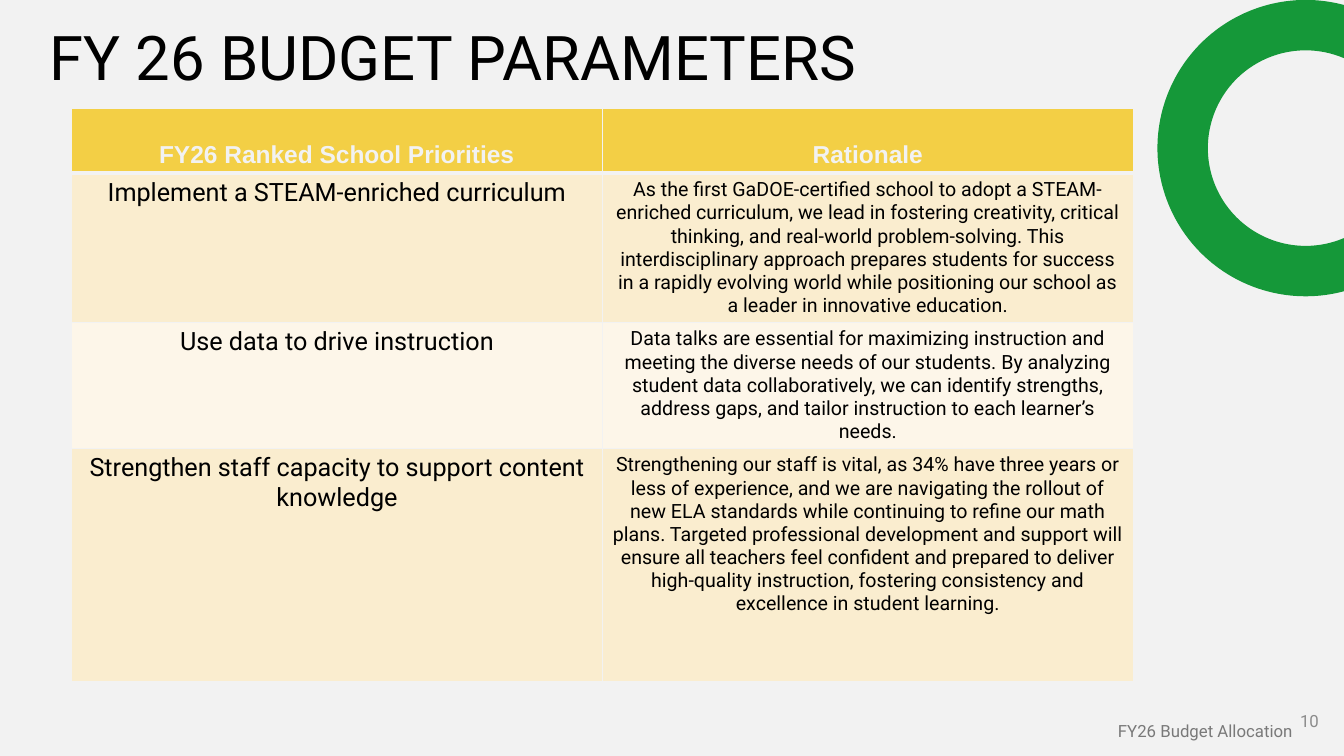
from math import acos, cos, degrees, sin

from lxml.etree import SubElement
from pptx import Presentation
from pptx.dml.color import RGBColor
from pptx.enum.text import MSO_ANCHOR, PP_ALIGN
from pptx.oxml.ns import qn
from pptx.util import Inches, Pt

PAGE_WIDTH, PAGE_HEIGHT = 13.33, 7.5
PALE_GREY = RGBColor(0xF2, 0xF2, 0xF2)
BLACK = RGBColor(0, 0, 0)
GREEN = RGBColor(0x15, 0x98, 0x39)
GOLD = RGBColor(0xF3, 0xCF, 0x45)
CREAM = RGBColor(0xFA, 0xED, 0xCF)
LIGHT_CREAM = RGBColor(0xFD, 0xF6, 0xE9)
NUMBER_GREY = RGBColor(0x8C, 0x8C, 0x8C)
FOOTER_GREY = RGBColor(0x79, 0x79, 0x79)

HEADINGS = ("FY26 Ranked School Priorities", "Rationale")
PRIORITIES = [
    ("Implement a STEAM-enriched curriculum",
     "As the first GaDOE-certified school to adopt a STEAM-enriched curriculum, "
     "we lead in fostering creativity, critical thinking, and real-world "
     "problem-solving. This interdisciplinary approach prepares students for "
     "success in a rapidly evolving world while positioning our school as a "
     "leader in innovative education."),
    ("Use data to drive instruction",
     "Data talks are essential for maximizing instruction and meeting the diverse "
     "needs of our students. By analyzing student data collaboratively, we can "
     "identify strengths, address gaps, and tailor instruction to each learner’s "
     "needs."),
    ("Strengthen staff capacity to support content knowledge",
     "Strengthening our staff is vital, as 34% have three years or less of "
     "experience, and we are navigating the rollout of new ELA standards while "
     "continuing to refine our math plans. Targeted professional development and "
     "support will ensure all teachers feel confident and prepared to deliver "
     "high-quality instruction, fostering consistency and excellence in student "
     "learning."),
]
ROW_SHARES = (0.64, 1.48, 1.25, 2.31)


def write(frame, text, size, color, align, font="Roboto", bold=False):
    frame.text = text
    para = frame.paragraphs[0]
    para.alignment = align
    span = para.runs[0]
    span.font.name = font
    span.font.size = Pt(size)
    span.font.bold = bold
    span.font.color.rgb = color
    return para


def set_borders(cell, widths):
    """Draw cell borders; widths maps a side (L, R, T, B) to points."""
    properties = cell._tc.get_or_add_tcPr()
    for side, width in widths.items():
        line = SubElement(properties, qn(f"a:ln{side}"), w=str(Pt(width)))
        fill = SubElement(line, qn("a:solidFill"))
        SubElement(fill, qn("a:srgbClr"), val=str(PALE_GREY))


def add_ring(page, center_x, center_y, radius, thickness):
    """Draw a ring cut off by the right edge of the page."""
    left, top = Inches(center_x - radius), Inches(center_y - radius)
    right, bottom = Inches(PAGE_WIDTH), Inches(center_y + radius)
    builder = page.shapes.build_freeform(left, top)
    builder.add_line_segments([(right, top), (right, bottom), (left, bottom)])
    ring = builder.convert_to_shape()
    ring.shadow.inherit = False
    ring.fill.solid()
    ring.fill.fore_color.rgb = GREEN
    ring.line.fill.background()

    outline = next(ring._element.iter(qn("a:path")))
    for segment in list(outline):
        outline.remove(segment)

    def add_arc(first_step, arc_radius, direction):
        """Go round from one cut to the other; direction 1 is clockwise."""
        cut = acos((PAGE_WIDTH - center_x) / arc_radius)
        start = direction * cut
        step = SubElement(outline, qn(first_step))
        SubElement(step, qn("a:pt"),
                   x=str(Inches(radius + arc_radius * cos(start))),
                   y=str(Inches(radius + arc_radius * sin(start))))
        SubElement(outline, qn("a:arcTo"),
                   wR=str(Inches(arc_radius)), hR=str(Inches(arc_radius)),
                   stAng=str(round(degrees(start) % 360 * 60000)),
                   swAng=str(round(direction * (360 - 2 * degrees(cut)) * 60000)))

    add_arc("a:moveTo", radius, -1)
    add_arc("a:lnTo", radius - thickness, 1)
    SubElement(outline, qn("a:close"))


def add_title(page, box):
    title = page.shapes.title
    title.left, title.top, title.width, title.height = map(Inches, box)
    frame = title.text_frame
    frame.margin_left = frame.margin_right = frame.margin_top = frame.margin_bottom = 0
    frame.vertical_anchor = MSO_ANCHOR.MIDDLE
    para = write(frame, "FY 26 BUDGET PARAMETERS", 44, BLACK, PP_ALIGN.LEFT)
    para.line_spacing = 0.9


def add_priorities_table(page, box):
    left, top, width, height = box
    rows = [HEADINGS, *PRIORITIES]
    table = page.shapes.add_table(len(rows), len(HEADINGS), *map(Inches, box)).table
    for column in table.columns:
        column.width = Inches(width / len(HEADINGS))
    for row, share in zip(table.rows, ROW_SHARES):
        row.height = Inches(height * share / sum(ROW_SHARES))

    for r, texts in enumerate(rows):
        for c, text in enumerate(texts):
            cell = table.cell(r, c)
            set_borders(cell, {"L": 1, "R": 1, "T": 3 if r == 1 else 1,
                               "B": 3 if r == 0 else 1})
            cell.fill.solid()
            if r == 0:
                cell.fill.fore_color.rgb = GOLD
                cell.vertical_anchor = MSO_ANCHOR.BOTTOM
                write(cell.text_frame, text, 17.5, PALE_GREY, PP_ALIGN.CENTER,
                      "Arial", True)
            else:
                cell.fill.fore_color.rgb = CREAM if r % 2 else LIGHT_CREAM
                write(cell.text_frame, text, 14 if c else 18, BLACK, PP_ALIGN.CENTER)


def add_footer_text(page, box, text, color):
    frame = page.shapes.add_textbox(*map(Inches, box)).text_frame
    frame.word_wrap = True
    frame.vertical_anchor = MSO_ANCHOR.MIDDLE
    write(frame, text, 12, color, PP_ALIGN.RIGHT)


def main():
    deck = Presentation()
    deck.slide_width, deck.slide_height = Inches(PAGE_WIDTH), Inches(PAGE_HEIGHT)
    page = deck.slides.add_slide(deck.slide_layouts.get_by_name("Title Only"))
    page.background.fill.solid()
    page.background.fill.fore_color.rgb = PALE_GREY

    add_ring(page, 12.95, 1.47, 1.47, 0.5)
    add_title(page, (0.49, 0.23, 8.49, 0.75))
    add_priorities_table(page, (0.71, 1.08, 10.53, 5.68))
    add_footer_text(page, (10.18, 6.95, 3, 0.4), "10", NUMBER_GREY)
    add_footer_text(page, (10.79, 7.05, 2.13, 0.4), "FY26 Budget Allocation", FOOTER_GREY)
    deck.save("out.pptx")


if __name__ == "__main__":
    main()
